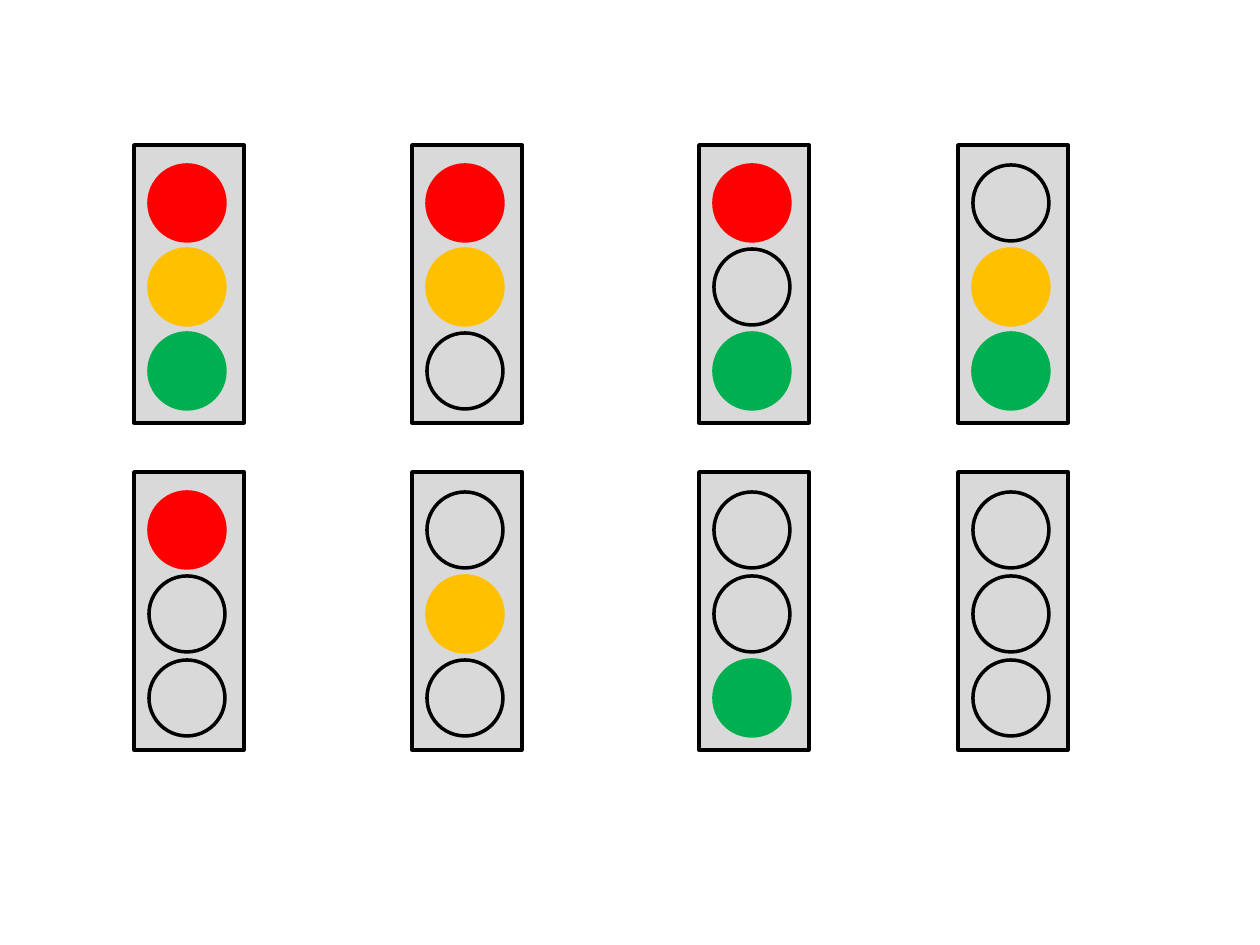
from pptx import Presentation
from pptx.dml.color import RGBColor
from pptx.enum.shapes import MSO_SHAPE
from pptx.util import Emu, Pt

PX = 914400 / 126
COLORS = {
    "housing": "D9D9D9",
    "outline": "000000",
    "red": "FF0000",
    "amber": "FFC000",
    "green": "00B050",
}
LAMPS = ["red", "amber", "green"]
COLUMNS = [134, 412, 699, 958]
ROWS = [145, 472]
HOUSING_W, HOUSING_H = 110, 278
LAMP_SIZE, LAMP_PITCH = 76, 84
LAMP_DX, LAMP_DY = 15, 20

# Lamps that are lit, by row and column
LIT = [
    [["red", "amber", "green"], ["red", "amber"], ["red", "green"], ["amber", "green"]],
    [["red"], ["amber"], ["green"], []],
]


def px(n):
    return Emu(round(n * PX))


def add_part(group, kind, x, y, w, h, fill, line):
    """Add one outlined shape to a group; a fill of None leaves it hollow."""
    sp = group.shapes.add_shape(kind, px(x), px(y), px(w), px(h))
    sp.shadow.inherit = False
    if fill:
        sp.fill.solid()
        sp.fill.fore_color.rgb = RGBColor.from_string(COLORS[fill])
    else:
        sp.fill.background()
    sp.line.color.rgb = RGBColor.from_string(COLORS[line])
    sp.line.width = Pt(2)


prs = Presentation()
prs.slide_width, prs.slide_height = px(1260), px(945)
s = prs.slides.add_slide(prs.slide_layouts[6])

for y, row in zip(ROWS, LIT):
    for x, lit in zip(COLUMNS, row):
        light = s.shapes.add_group_shape()
        add_part(light, MSO_SHAPE.RECTANGLE, x, y, HOUSING_W, HOUSING_H,
                 "housing", "outline")
        for i, lamp in enumerate(LAMPS):
            on = lamp in lit
            add_part(light, MSO_SHAPE.OVAL,
                     x + LAMP_DX, y + LAMP_DY + i * LAMP_PITCH,
                     LAMP_SIZE, LAMP_SIZE,
                     lamp if on else None, lamp if on else "outline")

prs.save("out.pptx")
